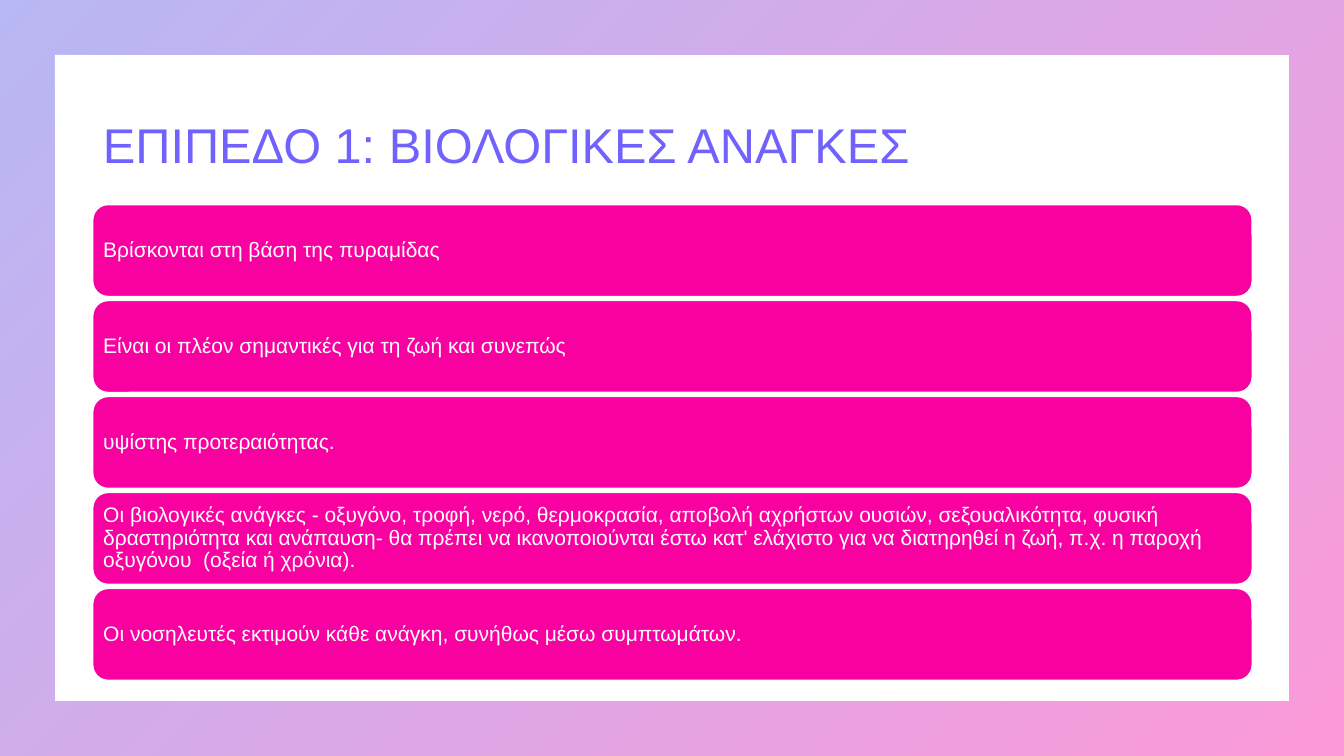
from lxml import etree
from pptx import Presentation
from pptx.dml.color import RGBColor
from pptx.enum.shapes import MSO_SHAPE
from pptx.enum.text import MSO_ANCHOR, MSO_AUTO_SIZE, PP_ALIGN
from pptx.oxml.ns import qn
from pptx.util import Inches, Pt

FRAME, CARD = MSO_SHAPE.FRAME, MSO_SHAPE.ROUNDED_RECTANGLE
MIDDLE, LEFT, NO_FIT = MSO_ANCHOR.MIDDLE, PP_ALIGN.LEFT, MSO_AUTO_SIZE.NONE

# Content
TITLE = "ΕΠΙΠΕΔΟ 1: ΒΙΟΛΟΓΙΚΕΣ ΑΝΑΓΚΕΣ"
NEEDS = [
    "Βρίσκονται στη βάση της πυραμίδας",
    "Είναι οι πλέον σημαντικές για τη ζωή και συνεπώς",
    "υψίστης προτεραιότητας.",
    "Οι βιολογικές ανάγκες - οξυγόνο, τροφή, νερό, θερμοκρασία, αποβολή "
    "αχρήστων ουσιών, σεξουαλικότητα, φυσική δραστηριότητα και ανάπαυση- "
    "θα πρέπει να ικανοποιούνται έστω κατ' ελάχιστο για να διατηρηθεί η ζωή, "
    "π.χ. η παροχή οξυγόνου  (οξεία ή χρόνια).",
    "Οι νοσηλευτές εκτιμούν κάθε ανάγκη, συνήθως μέσω συμπτωμάτων.",
]

# Format and grid
PINK, WHITE, VIOLET = "F900A0", "FFFFFF", "7162FE"
FRAME_COLOURS = ["4D4EE6", PINK]
FRAME_OPACITY = 40
SLIDE_W, SLIDE_H = Inches(13.33), Inches(7.5)
COL_X, COL_W = Inches(0.92), Inches(11.5)
TITLE_Y, TITLE_H = Inches(0.74), Inches(1.45)
CARDS_Y, CARDS_BOTTOM = Inches(2.03), Inches(6.75)
GAP = Inches(0.04)
CARD_H = (CARDS_BOTTOM - CARDS_Y - GAP * (len(NEEDS) - 1)) // len(NEEDS)


def rgb(colour):
    return RGBColor.from_string(colour)


def write(sp, text, size, colour, margin=None):
    tf = sp.text_frame
    tf.text = text
    layout = {"word_wrap": True, "auto_size": NO_FIT, "vertical_anchor": MIDDLE}
    if margin is not None:
        layout.update({f"margin_{side}": margin
                       for side in ("left", "top", "right", "bottom")})
    for name, value in layout.items():
        setattr(tf, name, value)
    p = tf.paragraphs[0]
    p.alignment, p.line_spacing = LEFT, 0.9
    font = p.runs[0].font
    font.name, font.size = "Arial", Pt(size)
    font.color.rgb = rgb(colour)


prs = Presentation()
prs.slide_width, prs.slide_height = SLIDE_W, SLIDE_H
s = prs.slides.add_slide(prs.slide_layouts[5])

# Gradient frame, behind everything else
frame = s.shapes.add_shape(FRAME, 0, 0, SLIDE_W, SLIDE_H)
frame.adjustments[0] = 0.072
frame.shadow.inherit = False
frame.line.fill.background()
frame.fill.gradient()
frame.fill.gradient_angle = 315
for stop, colour in zip(frame.fill.gradient_stops, FRAME_COLOURS):
    stop.color.rgb = rgb(colour)
for clr in frame._element.spPr.iter(qn("a:srgbClr")):
    etree.SubElement(clr, qn("a:alpha")).set("val", str(FRAME_OPACITY * 1000))
s.shapes._spTree.insert(2, frame._element)

# Title
title = s.shapes.title
title.left, title.top, title.width, title.height = COL_X, TITLE_Y, COL_W, TITLE_H
write(title, TITLE, 34.8, VIOLET)

# One card per statement
for row, need in enumerate(NEEDS):
    card = s.shapes.add_shape(CARD, COL_X, CARDS_Y + row * (CARD_H + GAP), COL_W, CARD_H)
    card.shadow.inherit = False
    card.fill.solid()
    card.fill.fore_color.rgb = rgb(PINK)
    card.line.color.rgb = rgb(WHITE)
    card.line.width = Pt(1)
    write(card, need, 15, WHITE, Inches(0.06))

prs.save("out.pptx")
